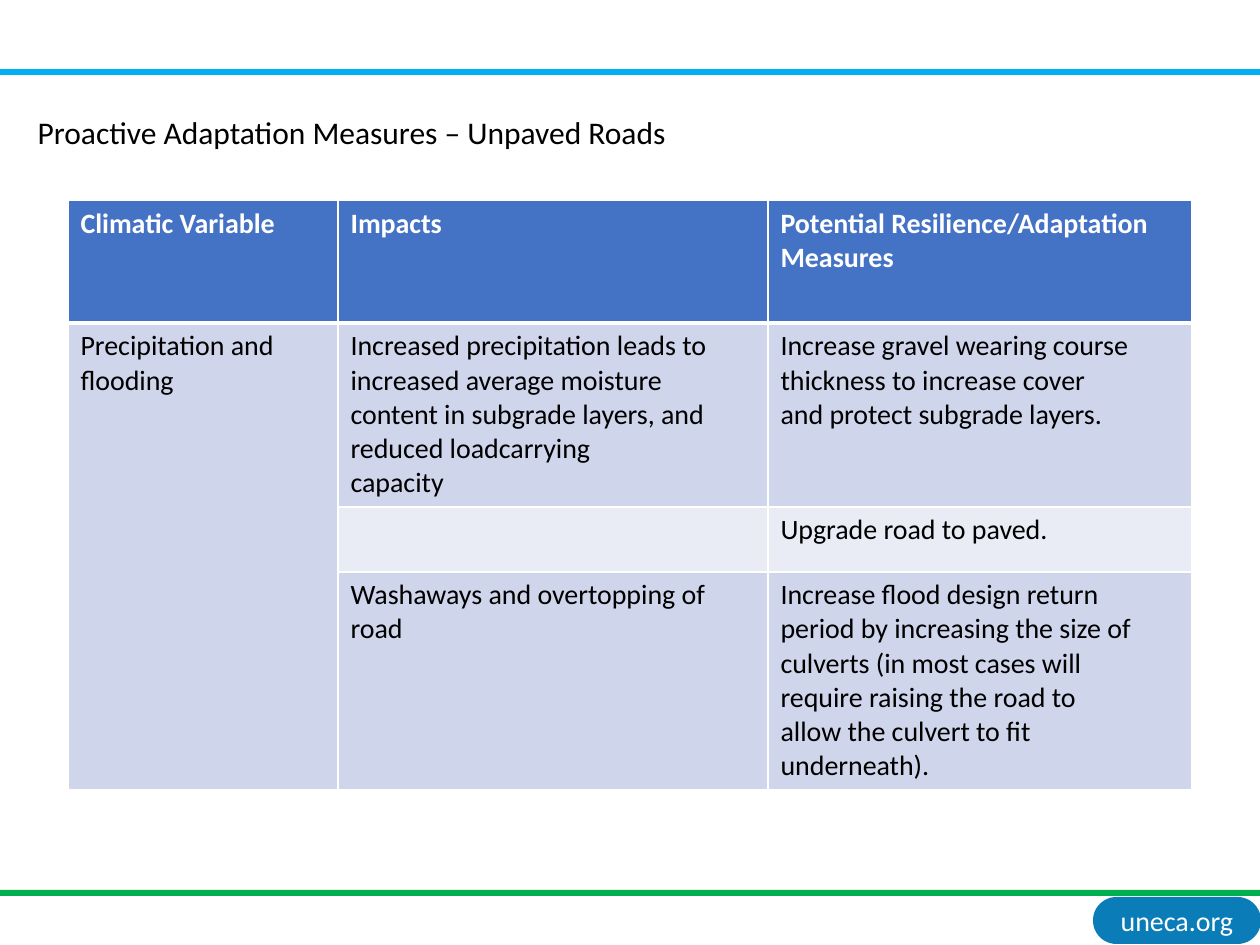
from lxml.etree import SubElement
from pptx import Presentation
from pptx.dml.color import RGBColor
from pptx.enum.shapes import MSO_SHAPE
from pptx.enum.text import MSO_ANCHOR, PP_ALIGN
from pptx.oxml.ns import qn
from pptx.util import Pt

PX = 7257  # EMU in one px, at 126 px to the inch
WHITE, BLACK = "FFFFFF", "000000"
HEAD, DARK, PALE = "4472C4", "CFD5EA", "E9EBF5"

COLS = [270, 430, 424]
ROWS = [123, 181, 65, 213]
CELLS = [
    ["Climatic Variable", "Impacts", "Potential Resilience/Adaptation Measures"],
    ["Precipitation and flooding",
     "Increased precipitation leads to increased average moisture\n"
     "content in subgrade layers, and reduced loadcarrying\n"
     "capacity",
     "Increase gravel wearing course\n"
     "thickness to increase cover\n"
     "and protect subgrade layers."],
    ["", "", "Upgrade road to paved."],
    ["", "Washaways and overtopping of road",
     "Increase flood design return\n"
     "period by increasing the size of\n"
     "culverts (in most cases will\n"
     "require raising the road to\n"
     "allow the culvert to fit\n"
     "underneath)."],
]


def px(*sizes):
    return [size * PX for size in sizes]


def paint(fill, color):
    fill.solid()
    fill.fore_color.rgb = RGBColor.from_string(color)


def write(frame, text, size, color, bold=False, align=PP_ALIGN.LEFT):
    frame.text = text
    for para in frame.paragraphs:
        para.alignment = align
        for run in para.runs:
            run.font.name = "Calibri"
            run.font.size = Pt(size)
            run.font.bold = bold
            run.font.color.rgb = RGBColor.from_string(color)


def add_block(slide, kind, box, color):
    block = slide.shapes.add_shape(kind, *px(*box))
    block.shadow.inherit = False
    paint(block.fill, color)
    block.line.fill.background()
    return block


def add_frame(slide, box):
    """Bars at the top and bottom, with the address tab below."""
    left, top, wide, high = box
    # Address tab
    tab = add_block(slide, MSO_SHAPE.ROUNDED_RECTANGLE,
                    (left + wide - 167, top + high - 48, 168, 47), "0A7CB8")
    tab.adjustments[0] = 0.5
    frame = tab.text_frame
    frame.margin_left = frame.margin_right = 6 * PX
    frame.margin_top = frame.margin_bottom = 6 * PX
    frame.vertical_anchor = MSO_ANCHOR.MIDDLE
    write(frame, "uneca.org", 16, WHITE, align=PP_ALIGN.CENTER)
    # Bars
    for drop, color in ((69, "00B0F0"), (890, "00B050")):
        add_block(slide, MSO_SHAPE.RECTANGLE, (left, top + drop, wide, 6), color)


def add_title(slide, box):
    title = slide.shapes.title
    title.left, title.top, title.width, title.height = px(*box)
    frame = title.text_frame
    write(frame, "Proactive Adaptation Measures – Unpaved Roads", 18, BLACK)
    frame.word_wrap = False
    frame.vertical_anchor = MSO_ANCHOR.TOP


def add_edges(cell, row):
    """White cell borders, thicker under the header."""
    widths = {"L": 1, "R": 1, "T": 3 if row == 1 else 1, "B": 3 if row == 0 else 1}
    props = cell._tc.get_or_add_tcPr()
    for side, width in widths.items():
        line = SubElement(props, qn(f"a:ln{side}"), w=str(Pt(width)))
        fill = SubElement(line, qn("a:solidFill"))
        SubElement(fill, qn("a:srgbClr"), val=WHITE)


def add_grid(slide, left, top):
    box = px(left, top, sum(COLS), sum(ROWS))
    table = slide.shapes.add_table(len(ROWS), len(COLS), *box).table
    for col, wide in zip(table.columns, COLS):
        col.width = wide * PX
    for r, (line, high) in enumerate(zip(CELLS, ROWS)):
        table.rows[r].height = high * PX
        for c, text in enumerate(line):
            cell = table.cell(r, c)
            add_edges(cell, r)
            # The first column is one merged cell below the header
            paint(cell.fill, HEAD if r == 0 else PALE if r == 2 and c else DARK)
            if text:
                write(cell.text_frame, text, 16, BLACK if r else WHITE, bold=r == 0)
    table.cell(1, 0).merge(table.cell(3, 0))


def main():
    deck = Presentation()
    deck.slide_width, deck.slide_height = px(1260, 945)
    slide = deck.slides.add_slide(deck.slide_layouts[5])
    add_frame(slide, (0, 0, 1260, 945))
    add_grid(slide, 68, 200)
    add_title(slide, (25, 107, 662, 50))
    deck.save("out.pptx")


if __name__ == "__main__":
    main()
